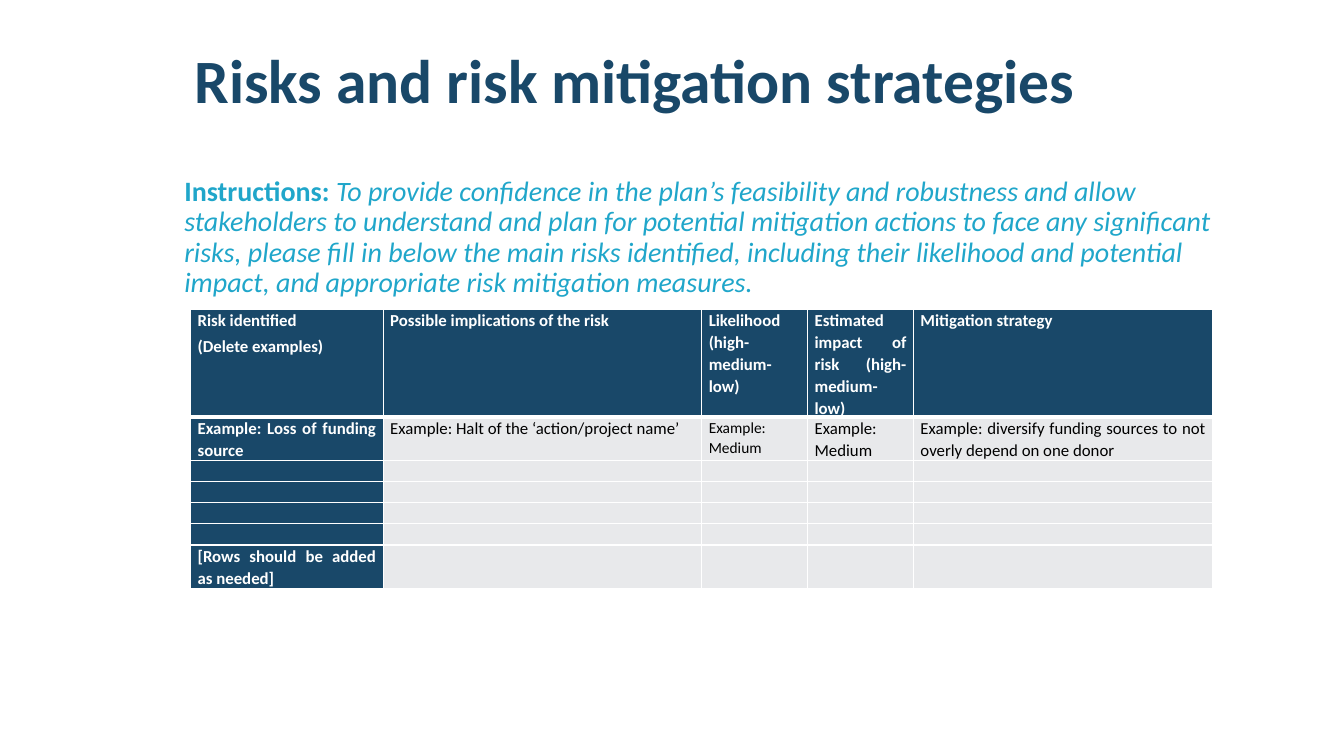
from lxml import etree
from pptx import Presentation
from pptx import util as u
from pptx.dml.color import RGBColor
from pptx.enum import text
from pptx.oxml import ns

COLORS = {"navy": "194869", "cyan": "20A6CA", "grey": "E8E9EB", "white": "FFFFFF", "black": "000000"}
FONT = "Calibri"
TITLE = "Risks and risk mitigation strategies"
INSTRUCTIONS = [
    ("Instructions:", {"bold": True}),
    (" To provide confidence in the plan’s feasibility and robustness and allow stakeholders to "
     "understand and plan for potential mitigation actions to face any significant risks, please fill "
     "in below the main risks identified, including their likelihood and potential impact, and "
     "appropriate risk mitigation measures.", {"italic": True}),
]
EMPTY_ROW = [""] * 5
RISKS = [
    ["Risk identified\n(Delete examples)", "Possible implications of the risk",
     "Likelihood (high-medium-low)", "Estimated impact of risk (high-medium-low)",
     "Mitigation strategy"],
    ["Example: Loss of funding source", "Example: Halt of the ‘action/project name’",
     "Example: Medium", "Example: Medium",
     "Example: diversify funding sources to not overly depend on one donor"],
    *[EMPTY_ROW] * 4,
    ["[Rows should be added as needed]", "", "", "", ""],
]
SMALL_CELL = (1, 2)
COLUMN_WIDTHS = [1.91, 3.16, 1.05, 1.05, 2.97]
ROW_LINES = [5, 2, 1, 1, 1, 1, 2]
LINE_HEIGHT = 0.21
TITLE_BOX = (1.83, 0.1, 11.5, 1.45)
INSTRUCTIONS_BOX = (1.73, 1.71, 11, 5.28)
TABLE_CORNER = (1.89, 3.07)


def apply(target, values):
    for name, value in values.items():
        setattr(target, name, value)


def place(shape, box):
    apply(shape, dict(zip(("left", "top", "width", "height"), map(u.Inches, box))))


def write(paragraph, content, color, size, **style):
    run = paragraph.add_run()
    run.text = content
    apply(run.font, {"name": FONT, "size": u.Pt(size), **style})
    run.font.color.rgb = RGBColor.from_string(COLORS[color])


def set_borders(cell, widths):
    properties = cell._tc.get_or_add_tcPr()
    for index, (side, width) in enumerate(widths.items()):
        line = etree.Element(ns.qn(f"a:ln{side}"), w=str(u.Pt(width)))
        fill = etree.SubElement(line, ns.qn("a:solidFill"))
        etree.SubElement(fill, ns.qn("a:srgbClr"), val=COLORS["white"])
        properties.insert(index, line)


def fill_cell(cell, content, row, column):
    dark = row == 0 or column == 0
    cell.fill.solid()
    cell.fill.fore_color.rgb = RGBColor.from_string(COLORS["navy" if dark else "grey"])
    apply(cell, {"margin_left": u.Inches(0.07), "margin_right": u.Inches(0.07),
                 "margin_top": 0, "margin_bottom": 0})
    set_borders(cell, {"L": 1, "R": 1, "T": 3 if row == 1 else 1, "B": 3 if row == 0 else 1})
    size = 11 if (row, column) == SMALL_CELL else 12
    frame = cell.text_frame
    for index, line in enumerate(content.split("\n")):
        paragraph = frame.add_paragraph() if index else frame.paragraphs[0]
        apply(paragraph, {"alignment": text.PP_ALIGN.JUSTIFY, "line_spacing": 1.07,
                          "space_after": u.Pt(3)})
        if line:
            write(paragraph, line, "white" if dark else "black", size, bold=dark)
        else:
            etree.SubElement(paragraph._p, ns.qn("a:endParaRPr"), sz=str(size * 100))


def add_title(slide):
    title = slide.shapes.title
    place(title, TITLE_BOX)
    apply(title.text_frame, {"vertical_anchor": text.MSO_ANCHOR.MIDDLE, "word_wrap": True,
                             "auto_size": text.MSO_AUTO_SIZE.NONE})
    paragraph = title.text_frame.paragraphs[0]
    apply(paragraph, {"alignment": text.PP_ALIGN.LEFT, "line_spacing": 0.9, "space_before": 0})
    write(paragraph, TITLE, "navy", 44, bold=True)


def add_instructions(slide):
    box = slide.shapes.add_textbox(*map(u.Inches, INSTRUCTIONS_BOX))
    box.text_frame.word_wrap = True
    paragraph = box.text_frame.paragraphs[0]
    paragraph.line_spacing = 0.9
    for content, style in INSTRUCTIONS:
        write(paragraph, content, "cyan", 20, **style)


def add_risk_table(slide):
    size = (sum(COLUMN_WIDTHS), sum(ROW_LINES) * LINE_HEIGHT)
    table = slide.shapes.add_table(len(RISKS), len(COLUMN_WIDTHS),
                                   *map(u.Inches, TABLE_CORNER + size)).table
    apply(table, {"first_col": True, "horz_banding": False})
    for column, width in zip(table.columns, COLUMN_WIDTHS):
        column.width = u.Inches(width)
    for row, lines in zip(table.rows, ROW_LINES):
        row.height = u.Inches(lines * LINE_HEIGHT)
    for row, contents in enumerate(RISKS):
        for column, content in enumerate(contents):
            fill_cell(table.cell(row, column), content, row, column)


def main():
    presentation = Presentation()
    apply(presentation, {"slide_width": u.Inches(13.33), "slide_height": u.Inches(7.5)})
    slide = presentation.slides.add_slide(presentation.slide_layouts[5])
    add_title(slide)
    add_instructions(slide)
    add_risk_table(slide)
    presentation.save("out.pptx")


if __name__ == "__main__":
    main()
